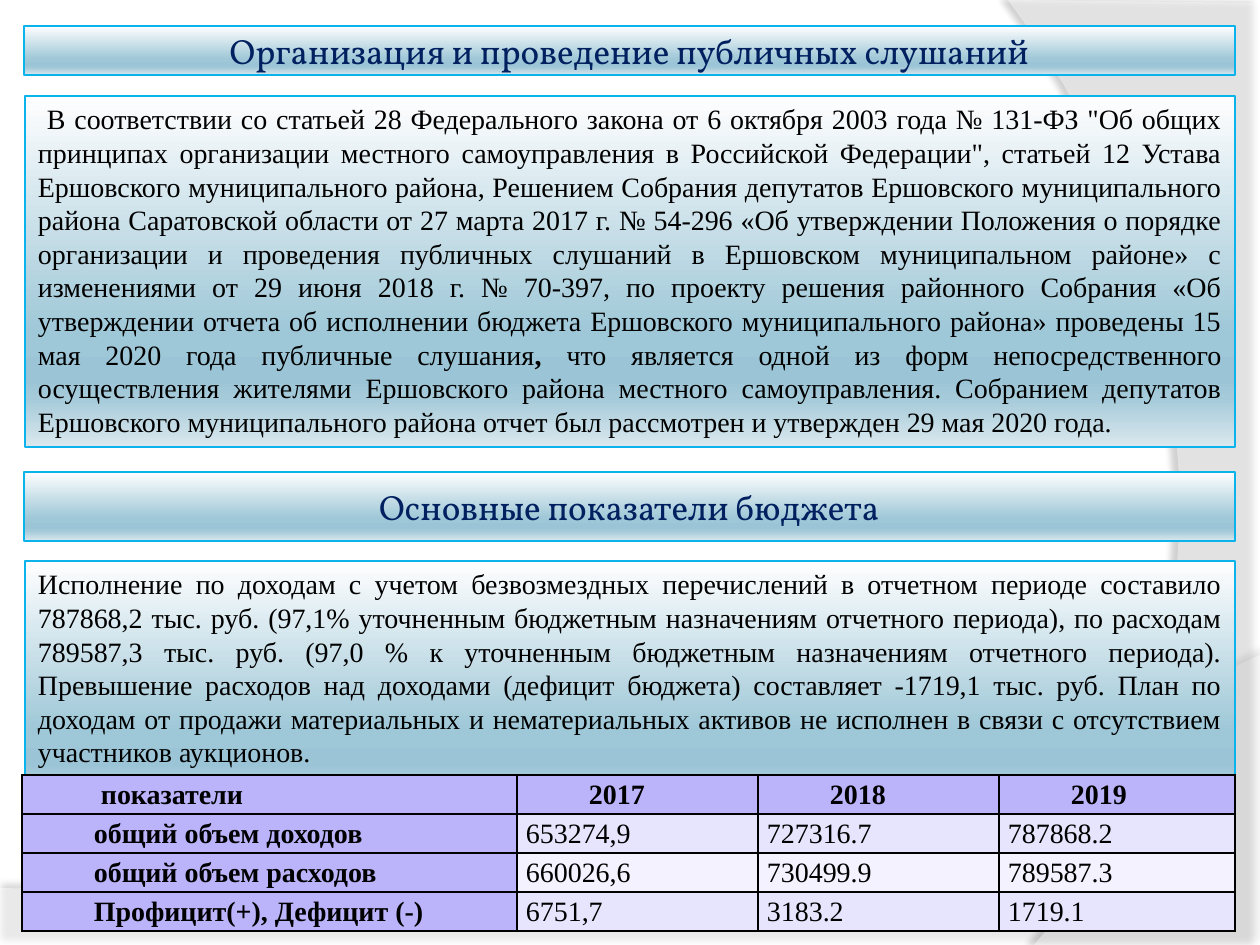
"""Builds a slide on public hearings and the main budget figures of a district."""
import dataclasses

import lxml.etree
import pptx
import pptx.dml.color
import pptx.enum.shapes
import pptx.enum.text
import pptx.oxml.ns
import pptx.util

PX = 914400 / 126
RGB = pptx.dml.color.RGBColor.from_string
ALIGN = pptx.enum.text.PP_ALIGN
ANCHOR = pptx.enum.text.MSO_ANCHOR
qn = pptx.oxml.ns.qn


@dataclasses.dataclass(frozen=True)
class Theme:
    heading_font: str = "Vollkorn"
    body_font: str = "Times New Roman"
    heading_size: int = 20
    body_size: int = 16
    heading: str = "002060"
    ink: str = "000000"
    paper: str = "FFFFFF"
    outline: str = "0AB3EC"
    label_fill: str = "BBB4FB"
    band_fills: tuple = ("E7E5FD", "F3F2FE")
    gradient: tuple = ((0, "FEFEFF"), (68, "9EC7D7"), (81, "9BC5D6"), (86, "A5CAD9"), (100, "DAE8EE"))


THEME = Theme()


def style_panel(panel, left, top, width, height, insets, anchor):
    """Places a panel and gives it the gradient, outline and text margins."""
    panel.left, panel.top, panel.width, panel.height = (round(n * PX) for n in (left, top, width, height))
    panel.shadow.inherit = False
    panel.fill.gradient()
    panel.fill.gradient_angle = 270
    stops = panel._element.spPr.find(".//" + qn("a:gsLst"))
    for stop in list(stops):
        stops.remove(stop)
    for percent, color in THEME.gradient:
        stop = lxml.etree.SubElement(stops, qn("a:gs"), pos=str(percent * 1000))
        lxml.etree.SubElement(stop, qn("a:srgbClr"), val=color)
    panel.line.color.rgb = RGB(THEME.outline)
    panel.line.width = pptx.util.Pt(0.75)
    frame = panel.text_frame
    frame.word_wrap = True
    frame.auto_size = pptx.enum.text.MSO_AUTO_SIZE.NONE
    frame.vertical_anchor = anchor
    frame.margin_left = frame.margin_right = round(insets * PX)
    frame.margin_top = frame.margin_bottom = round(6 * PX)


def style_para(para, font, size, color, align, bold=False):
    """Sets the alignment and font of a whole paragraph."""
    para.alignment = align
    para.font.name = font
    para.font.size = pptx.util.Pt(size)
    para.font.bold = bold
    para.font.color.rgb = RGB(color)


deck = pptx.Presentation()
deck.slide_width, deck.slide_height = round(1260 * PX), round(945 * PX)
page = deck.slides.add_slide(deck.slide_layouts[5])
shapes = page.shapes

# outline corners, then the control points and end of the closing curve
waves = [
    ([(0, 888), (0, 945), (1260, 945), (1260, 655)], [(703, 919), (493, 906), (0, 888)], 45, 35, 3.5, 270),
    ([(1260, 3), (1260, 945), (1034, 945)], [(1178, 780), (1283, 378), (1008, 0)], 40, 45, 4, 180),
]
for corners, (control1, control2, end), opacity, shade, distance, direction in waves:
    curve = []
    for step in range(1, 41):
        t = step / 40
        weights = ((1 - t) ** 3, 3 * t * (1 - t) ** 2, 3 * t * t * (1 - t), t ** 3)
        knots = (corners[-1], control1, control2, end)
        curve.append(tuple(sum(w * knot[axis] for w, knot in zip(weights, knots)) for axis in (0, 1)))
    builder = shapes.build_freeform(*corners[0], scale=PX)
    builder.add_line_segments(corners[1:] + curve, close=True)
    wave = builder.convert_to_shape()
    wave.fill.solid()
    wave.fill.fore_color.rgb = RGB(THEME.paper)
    wave.line.fill.background()
    wave.shadow.inherit = False
    properties = wave._element.spPr
    tint = properties.find(qn("a:solidFill") + "/" + qn("a:srgbClr"))
    lxml.etree.SubElement(tint, qn("a:alpha"), val=str(opacity * 1000))
    shadow = lxml.etree.SubElement(
        properties.find(qn("a:effectLst")), qn("a:outerShdw"), blurRad=str(pptx.util.Pt(4)),
        dist=str(pptx.util.Pt(distance)), dir=str(direction * 60000), algn="ctr", rotWithShape="0")
    shadow_color = lxml.etree.SubElement(shadow, qn("a:srgbClr"), val=THEME.ink)
    lxml.etree.SubElement(shadow_color, qn("a:alpha"), val=str(shade * 1000))

title = shapes.title
shapes._spTree.append(title._element)
rectangle = pptx.enum.shapes.MSO_SHAPE.RECTANGLE

hearings = [
    "В соответствии со статьей 28 Федерального закона от 6 октября 2003 года № 131-ФЗ \"Об общих "
    "принципах организации местного самоуправления в Российской Федерации\", статьей 12 Устава "
    "Ершовского муниципального района, Решением Собрания депутатов Ершовского муниципального "
    "района Саратовской области от 27 марта 2017 г. № 54-296 «Об утверждении Положения о "
    "порядке организации и проведения публичных слушаний в Ершовском муниципальном районе» с "
    "изменениями от 29 июня 2018 г. № 70-397, по проекту решения районного Собрания «Об "
    "утверждении отчета об исполнении бюджета Ершовского муниципального района» проведены 15 "
    "мая 2020 года публичные слушания",
    ", ",
    "что является одной из форм непосредственного осуществления жителями Ершовского района "
    "местного самоуправления. Собранием депутатов Ершовского муниципального района отчет был "
    "рассмотрен и утвержден 29 мая 2020 года.",
]
execution = [
    "Исполнение по доходам с учетом безвозмездных перечислений в отчетном периоде составило "
    "787868,2 тыс. руб. (97,1% уточненным бюджетным назначениям отчетного периода), по расходам "
    "789587,3 тыс. руб. (97,0 % к уточненным бюджетным назначениям отчетного периода). "
    "Превышение расходов над доходами (дефицит бюджета) составляет -1719,1 тыс. руб. План по "
    "доходам от продажи материальных и нематериальных активов не исполнен в связи с отсутствием "
    "участников аукционов.",
]
sections = [
    ("Организация и проведение публичных слушаний", 26, 49, hearings, 96, 351, 9),
    ("Основные показатели бюджета", 472, 69, execution, 561, 251, 0),
]
for heading, heading_top, heading_height, spans, body_top, body_height, first_indent in sections:
    banner = title if heading_top == 26 else shapes.add_shape(rectangle, 0, 0, 0, 0)
    style_panel(banner, 24, heading_top, 1211, heading_height, 6, ANCHOR.MIDDLE)
    banner.text_frame.text = heading
    style_para(banner.text_frame.paragraphs[0], THEME.heading_font, THEME.heading_size, THEME.heading, ALIGN.CENTER)

    body = shapes.add_shape(rectangle, 0, 0, 0, 0)
    style_panel(body, 25, body_top, 1210, body_height, 13, ANCHOR.TOP)
    para = body.text_frame.paragraphs[0]
    for text in spans:
        span = para.add_run()
        span.text = text
        if text == ", ":
            span.font.bold = True
    style_para(para, THEME.body_font, THEME.body_size, THEME.ink, ALIGN.JUSTIFY)
    para._p.get_or_add_pPr().set("indent", str(round(first_indent * PX)))

rows = [
    ("показатели", "2017", "2018", "2019"),
    ("общий объем доходов", "653274,9", "727316.7", "787868.2"),
    ("общий объем расходов", "660026,6", "730499.9", "789587.3"),
    ("Профицит(+), Дефицит (-)", "6751,7", "3183.2", "1719.1"),
]
column_widths = (495, 241, 241, 236)
row_height = 39
frame = shapes.add_table(
    len(rows), len(column_widths), round(22 * PX), round(775 * PX),
    round(sum(column_widths) * PX), round(row_height * len(rows) * PX))
table = frame.table
table.first_row = table.horz_banding = False
for column, width in zip(table.columns, column_widths):
    column.width = round(width * PX)
for row_index, row in enumerate(rows):
    table.rows[row_index].height = round(row_height * PX)
    for column_index, text in enumerate(row):
        is_label = row_index == 0 or column_index == 0
        cell = table.cell(row_index, column_index)
        cell.margin_left = cell.margin_right = round(9 * PX)
        cell.margin_top = cell.margin_bottom = 0
        for side in ("lnL", "lnR", "lnT", "lnB"):
            border = lxml.etree.SubElement(cell._tc.get_or_add_tcPr(), qn("a:" + side), w=str(pptx.util.Pt(1)))
            border_fill = lxml.etree.SubElement(border, qn("a:solidFill"))
            lxml.etree.SubElement(border_fill, qn("a:srgbClr"), val=THEME.ink)
        cell.fill.solid()
        cell.fill.fore_color.rgb = RGB(THEME.label_fill if is_label else THEME.band_fills[(row_index - 1) % 2])
        cell.text = text
        para = cell.text_frame.paragraphs[0]
        para.line_spacing = 1.15
        style_para(para, THEME.body_font, THEME.body_size, THEME.ink,
                   ALIGN.JUSTIFY if is_label else ALIGN.LEFT, bold=is_label)
        if is_label:
            margin = 70 if text == "показатели" else 63
            para._p.get_or_add_pPr().set("marL", str(round(margin * PX)))
        else:
            para.space_after = pptx.util.Pt(10)

deck.save("out.pptx")
